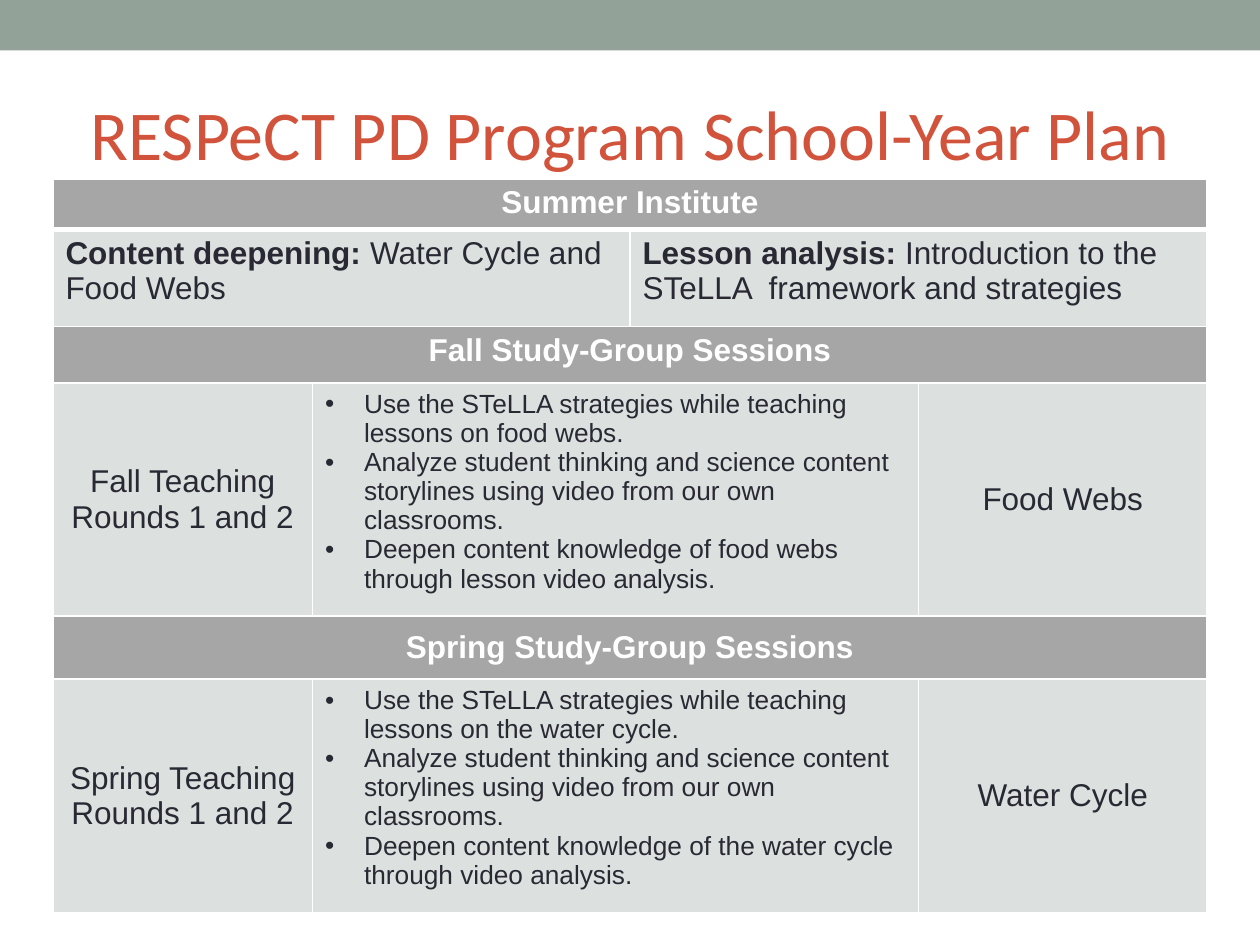
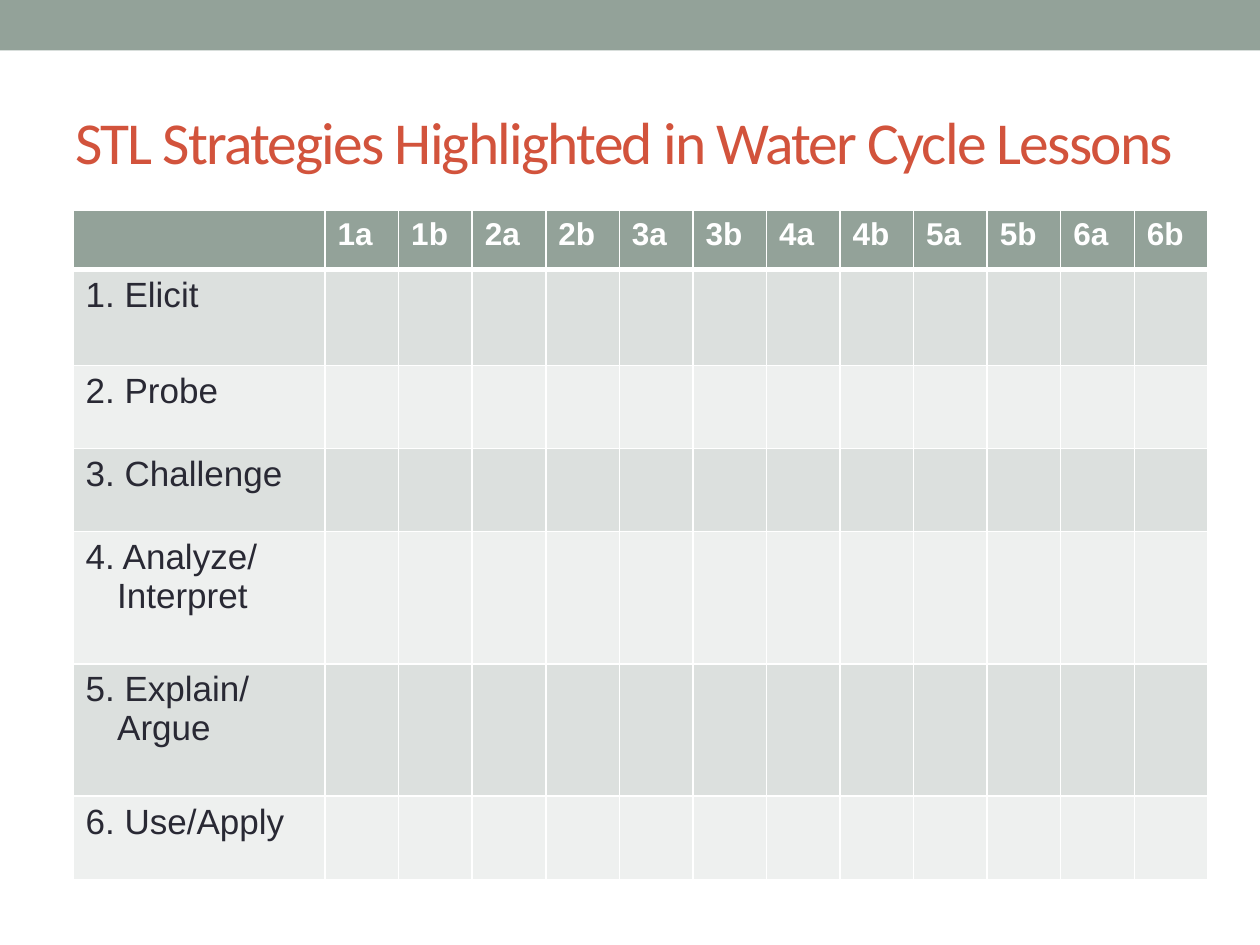
from lxml import etree
from pptx import Presentation
from pptx.dml.color import RGBColor
from pptx.enum import shapes, text
from pptx.oxml import ns
from pptx.util import Inches, Pt

COLORS = {
    "band": "93A299",
    "title": "D2533C",
    "section": "A6A6A6",
    "dark row": "DCE0DE",
    "light row": "EEF0EF",
    "ink": "292934",
    "white": "FFFFFF",
}
HEADING = {"bold": True, "color_name": "white"}
CENTER = text.PP_ALIGN.CENTER
MIDDLE = text.MSO_ANCHOR.MIDDLE


def color(name):
    return RGBColor.from_string(COLORS[name])


def add_xml(parent, tag, **attributes):
    return etree.SubElement(parent, ns.qn(tag), attributes)


class Deck:
    """Holds the presentation, the current slide and the shared style."""

    def __init__(self):
        self.presentation = Presentation()
        self.presentation.slide_width = Inches(10)
        self.presentation.slide_height = Inches(7.5)
        self.slide = None

    def add_slide(self):
        self.slide = self.presentation.slides.add_slide(self.presentation.slide_layouts[6])
        band = self.slide.shapes.add_shape(
            shapes.MSO_SHAPE.RECTANGLE, 0, 0, self.presentation.slide_width, Inches(0.4))
        band.shadow.inherit = False
        band.fill.solid()
        band.fill.fore_color.rgb = color("band")
        band.line.fill.background()

    def style_run(self, run, size=18, name="Arial", bold=False, color_name="ink"):
        for attribute, value in {"size": Pt(size), "name": name, "bold": bold}.items():
            setattr(run.font, attribute, value)
        run.font.color.rgb = color(color_name)

    def add_title(self, words, box, size, align=None, anchor=None, spacing=0):
        frame = self.slide.shapes.add_textbox(*map(Inches, box)).text_frame
        frame.word_wrap = True
        frame.vertical_anchor = anchor
        paragraph = frame.paragraphs[0]
        paragraph.alignment = align
        run = paragraph.add_run()
        run.text = words
        self.style_run(run, size, "Calibri", color_name="title")
        if spacing:
            run._r.get_or_add_rPr().set("spc", str(spacing * 100))

    def add_table(self, left, top, widths, heights):
        table = self.slide.shapes.add_table(
            len(heights), len(widths), Inches(left), Inches(top),
            Inches(sum(widths)), Inches(sum(heights))).table
        table.horz_banding = False
        for column, width in zip(table.columns, widths):
            column.width = Inches(width)
        for row, height in zip(table.rows, heights):
            row.height = Inches(height)
        return table

    def paint_row(self, table, row, fill):
        """Fill a row and rule it in white, with a thick line under the first row."""
        for cell in table.rows[row].cells:
            properties = cell._tc.get_or_add_tcPr()
            for side in "LRTB":
                thick = (row, side) in ((0, "B"), (1, "T"))
                line = add_xml(properties, f"a:ln{side}", w=str(Pt(3 if thick else 1)))
                add_xml(add_xml(line, "a:solidFill"), "a:srgbClr", val=COLORS["white"])
            cell.fill.solid()
            cell.fill.fore_color.rgb = color(fill)

    def fill_cell(self, cell, paragraphs, size=18, bold=False, color_name="ink", align=None,
                  anchor=None, hang=0, bullet=None, after=None):
        """Set paragraphs; one given as a tuple is a bold lead and plain words."""
        cell.vertical_anchor = anchor
        frame = cell.text_frame
        for index, content in enumerate(paragraphs):
            paragraph = frame.add_paragraph() if index else frame.paragraphs[0]
            properties = paragraph._p.get_or_add_pPr()
            if hang:
                properties.set("marL", str(Inches(hang)))
                properties.set("indent", str(-Inches(hang)))
            if bullet:
                add_xml(properties, "a:buFont", typeface="Arial")
                add_xml(properties, "a:buChar", char=bullet)
            paragraph.alignment = align
            if after:
                paragraph.space_after = Pt(after)
            parts = [(content, bold)]
            if isinstance(content, tuple):
                parts = list(zip(content, (True, False)))
            for words, is_bold in parts:
                run = paragraph.add_run()
                run.text = words
                self.style_run(run, size, bold=is_bold, color_name=color_name)


def add_year_plan(deck):
    deck.add_slide()
    deck.add_title("RESPeCT PD Program School-Year Plan", (0.5, 0.67, 9, 6.83), 40, CENTER)
    table = deck.add_table(0.42, 1.42, [2.06, 2.52, 2.29, 2.29],
                           [0.38, 0.77, 0.45, 1.79, 0.5, 1.79])
    for row in range(6):
        deck.paint_row(table, row, "dark row" if row % 2 else "section")

    headings = [("Summer Institute", None), ("Fall Study-Group Sessions", None),
                ("Spring Study-Group Sessions", MIDDLE)]
    for row, (heading, anchor) in zip((0, 2, 4), headings):
        table.cell(row, 0).merge(table.cell(row, 3))
        deck.fill_cell(table.cell(row, 0), [heading], align=CENTER, anchor=anchor, **HEADING)

    summer = [("Content deepening: ", "Water Cycle and Food Webs"),
              ("Lesson analysis: ", "Introduction to the STeLLA  framework and strategies")]
    for column, topic in zip((0, 2), summer):
        table.cell(1, column).merge(table.cell(1, column + 1))
        deck.fill_cell(table.cell(1, column), [topic])

    terms = [("Fall", "Food Webs", "food webs", "lesson video"),
             ("Spring", "Water Cycle", "the water cycle", "video")]
    for row, (term, unit, subject, video) in zip((3, 5), terms):
        table.cell(row, 1).merge(table.cell(row, 2))
        deck.fill_cell(table.cell(row, 0), [f"{term} Teaching", "Rounds 1 and 2"],
                       align=CENTER, anchor=MIDDLE)
        deck.fill_cell(table.cell(row, 1), [
            f"Use the STeLLA strategies while teaching lessons on {subject}.",
            "Analyze student thinking and science content storylines using video "
            "from our own classrooms.",
            f"Deepen content knowledge of {subject} through {video} analysis.",
        ], size=15, hang=0.31, bullet="•")
        deck.fill_cell(table.cell(row, 3), [unit], align=CENTER, anchor=MIDDLE)


def add_strategy_grid(deck):
    deck.add_slide()
    deck.add_title("STL Strategies Highlighted in Water Cycle Lessons",
                   (0.5, 0.58, 9, 1.08), 34, anchor=MIDDLE, spacing=-1)
    lessons = [f"{number}{part}" for number in range(1, 7) for part in "ab"]
    strategies = ["Elicit", "Probe", "Challenge", "Analyze/ Interpret",
                  "Explain/ Argue", "Use/Apply"]
    table = deck.add_table(0.58, 1.67, [2] + [7.01 / len(lessons)] * len(lessons),
                           [0.47, 0.76, 0.66, 0.66, 1.05, 1.05, 0.66])
    deck.paint_row(table, 0, "band")
    for column, lesson in enumerate(lessons, 1):
        deck.fill_cell(table.cell(0, column), [lesson], **HEADING)
    for row, strategy in enumerate(strategies, 1):
        deck.paint_row(table, row, "dark row" if row % 2 else "light row")
        deck.fill_cell(table.cell(row, 0), [f"{row}. {strategy}"], size=20, hang=0.25,
                       after=12 if row == 1 else 6)


def main():
    deck = Deck()
    add_year_plan(deck)
    add_strategy_grid(deck)
    deck.presentation.save("out.pptx")


if __name__ == "__main__":
    main()
